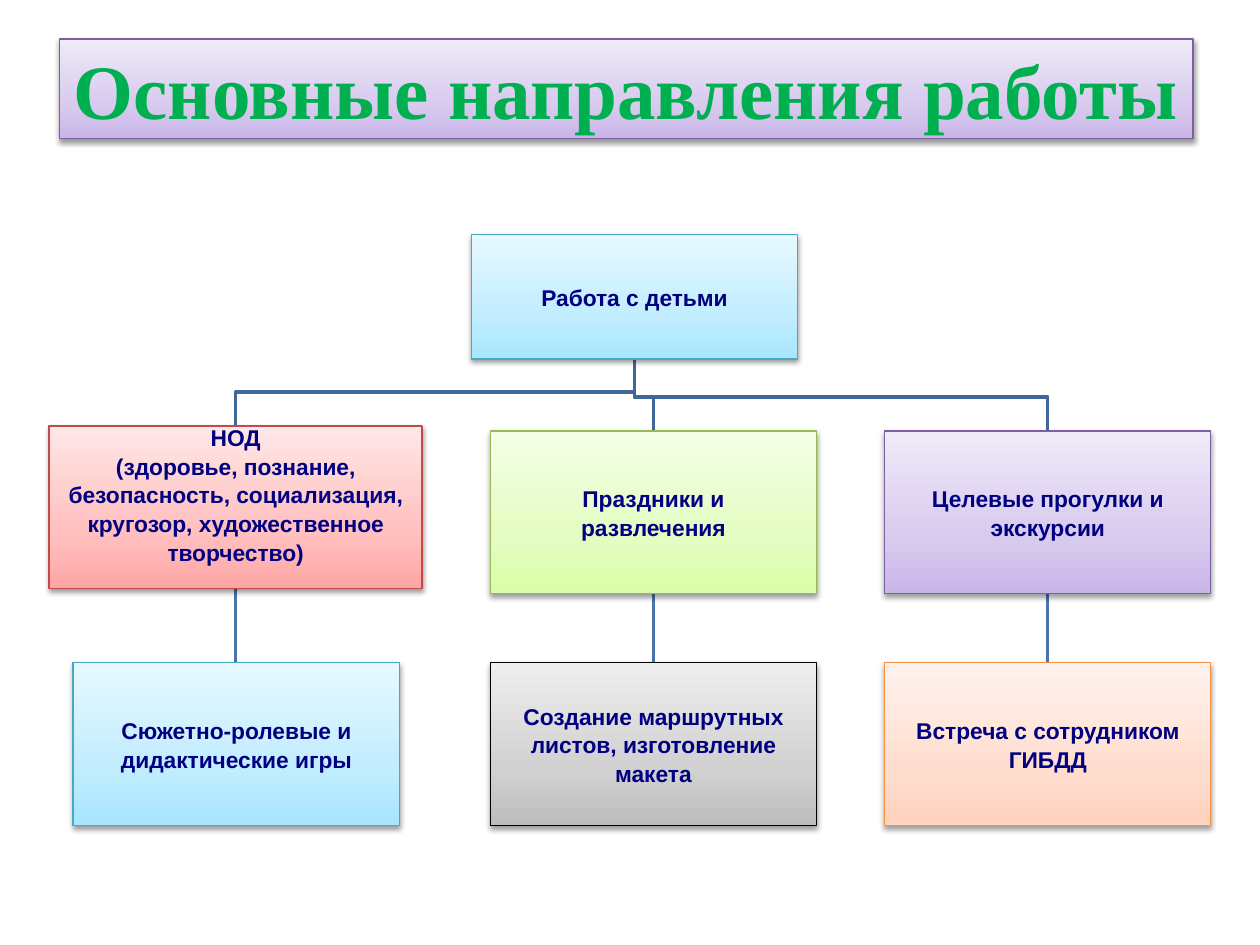
from lxml.etree import SubElement
from pptx import Presentation
from pptx.dml.color import RGBColor
from pptx.enum.shapes import MSO_CONNECTOR, MSO_SHAPE
from pptx.enum.text import MSO_ANCHOR, PP_ALIGN
from pptx.oxml.ns import qn
from pptx.util import Inches, Pt

# Each palette: gradient stops from bottom to top, then the outline
BLUE = ("A7E6FF", "C1EDFF", "E7F8FF", "46AAC5")
RED = ("FFA6A5", "FFC0BF", "FFE7E7", "BF4C48")
GREEN = ("DAFDA7", "E4FCC2", "F5FFE7", "98B955")
GREY = ("BDBDBD", "D1D1D1", "EEEEEE", "000000")
PURPLE = ("C9B5E8", "D8CBEE", "F0EAF9", "7D60A0")
ORANGE = ("FFD2BD", "FFDED0", "FFF2ED", "F69240")
STOPS = (0, 35, 100)
NAVY = "000080"

ROOT = (3.74, 1.86, 2.59, 0.99)
LOWER_TOP = 5.26
# Each branch: (box, paragraphs, palette, bottom inset), then the box below it
BRANCHES = [
    (((0.39, 3.38, 2.96, 1.29),
      ["НОД", "(здоровье, познание, безопасность, социализация, "
       "кругозор, художественное творчество)"], RED, 0.22),
     ((0.58, LOWER_TOP, 2.59, 1.29),
      ["Сюжетно-ролевые и дидактические игры"], BLUE, 0.01)),
    (((3.89, 3.42, 2.59, 1.29), ["Праздники и", "развлечения"], GREEN, 0.01),
     ((3.89, LOWER_TOP, 2.59, 1.29),
      ["Создание маршрутных листов, изготовление макета"], GREY, 0.01)),
    (((7.02, 3.42, 2.59, 1.29),
      ["Целевые прогулки и экскурсии"], PURPLE, 0.01),
     ((7.02, LOWER_TOP, 2.59, 1.29),
      ["Встреча с сотрудником ГИБДД"], ORANGE, 0.01)),
]


def rgb(color):
    return RGBColor.from_string(color)


def add_color(parent, color):
    return SubElement(parent, qn("a:srgbClr"), val=color)


def fill_gradient(shape, colors):
    """Run the gradient upwards through three stops."""
    shape.fill.gradient()
    shape.fill.gradient_angle = 90
    stops = shape._element.spPr.find(".//" + qn("a:gsLst"))
    for stop in list(stops):
        stops.remove(stop)
    for position, color in zip(STOPS, colors):
        add_color(SubElement(stops, qn("a:gs"), pos=str(position * 1000)), color)


def cast_shadow(shape):
    shape.shadow.inherit = False
    effects = shape._element.spPr.find(qn("a:effectLst"))
    shadow = SubElement(effects, qn("a:outerShdw"), blurRad=str(Pt(3.1)),
                        dist=str(Pt(1.6)), dir="5400000", rotWithShape="0")
    SubElement(add_color(shadow, "000000"), qn("a:alpha"), val="38000")


def write(shape, paragraphs, size=13, font="Arial", color=NAVY,
          inset=0.01, bottom=0.01, spacing=1.05):
    frame = shape.text_frame
    frame.word_wrap = True
    frame.vertical_anchor = MSO_ANCHOR.MIDDLE
    frame.margin_left = frame.margin_right = Inches(inset)
    frame.margin_top, frame.margin_bottom = Inches(0.01), Inches(bottom)
    for index, text in enumerate(paragraphs):
        paragraph = frame.add_paragraph() if index else frame.paragraphs[0]
        paragraph.alignment = PP_ALIGN.CENTER
        paragraph.line_spacing = spacing
        run = paragraph.add_run()
        run.text = text
        run.font.name, run.font.size, run.font.bold = font, Pt(size), True
        run.font.color.rgb = rgb(color)


def add_panel(slide, box, palette):
    panel = slide.shapes.add_shape(MSO_SHAPE.RECTANGLE, *map(Inches, box))
    fill_gradient(panel, palette[:3])
    panel.line.color.rgb = rgb(palette[3])
    panel.line.width = Pt(0.75)
    cast_shadow(panel)
    return panel


def add_elbow(slide, upper, lower):
    """Lead from the bottom of one box down, across and to the top of another."""
    start_x, start_y = upper[0] + upper[2] / 2, upper[1] + upper[3]
    end_x, end_y = lower[0] + lower[2] / 2, lower[1]
    bend_y = end_y - 0.27
    builder = slide.shapes.build_freeform(Inches(start_x), Inches(start_y))
    points = [(start_x, bend_y), (end_x, bend_y), (end_x, end_y)]
    builder.add_line_segments(
        [(Inches(x), Inches(y)) for x, y in points], close=False)
    elbow = builder.convert_to_shape()
    elbow.fill.background()
    elbow.line.color.rgb = rgb("3F6797")
    elbow.line.width = Pt(2)
    elbow.shadow.inherit = False


def add_drop(slide, upper, lower):
    x = Inches(upper[0] + upper[2] / 2)
    drop = slide.shapes.add_connector(
        MSO_CONNECTOR.STRAIGHT, x, Inches(upper[1] + upper[3]), x, Inches(lower[1]))
    drop.line.color.rgb = rgb("4875AC")
    drop.line.width = Pt(2)
    SubElement(drop._element.spPr, qn("a:effectLst"))


def add_title(slide, box):
    write(add_panel(slide, box, PURPLE), ["Основные направления работы"],
          size=44, font="Times New Roman", color="00B050", inset=0.05, spacing=1)


def add_chart_of_work(slide, root):
    for (upper, *_), (lower, *_) in reversed(BRANCHES):
        add_drop(slide, upper, lower)
        add_elbow(slide, root, upper)
    write(add_panel(slide, root, BLUE), ["Работа с детьми"])
    for branch in BRANCHES:
        for box, paragraphs, palette, bottom in branch:
            write(add_panel(slide, box, palette), paragraphs, bottom=bottom)


def main():
    deck = Presentation()
    deck.slide_width, deck.slide_height = Inches(10), Inches(7.5)
    slide = deck.slides.add_slide(deck.slide_layouts[6])
    add_title(slide, (0.47, 0.31, 9, 0.79))
    add_chart_of_work(slide, ROOT)
    deck.save("out.pptx")


if __name__ == "__main__":
    main()
